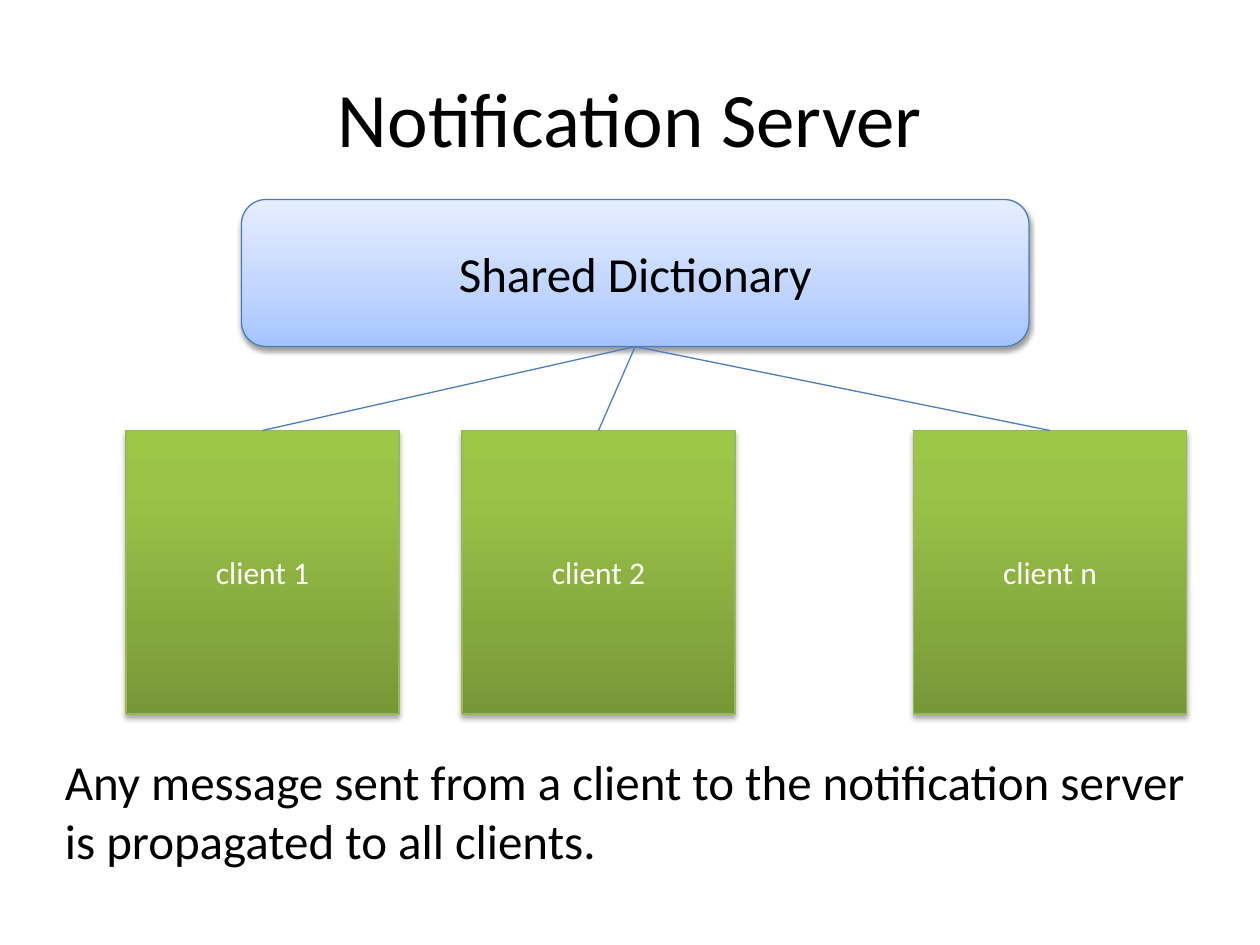
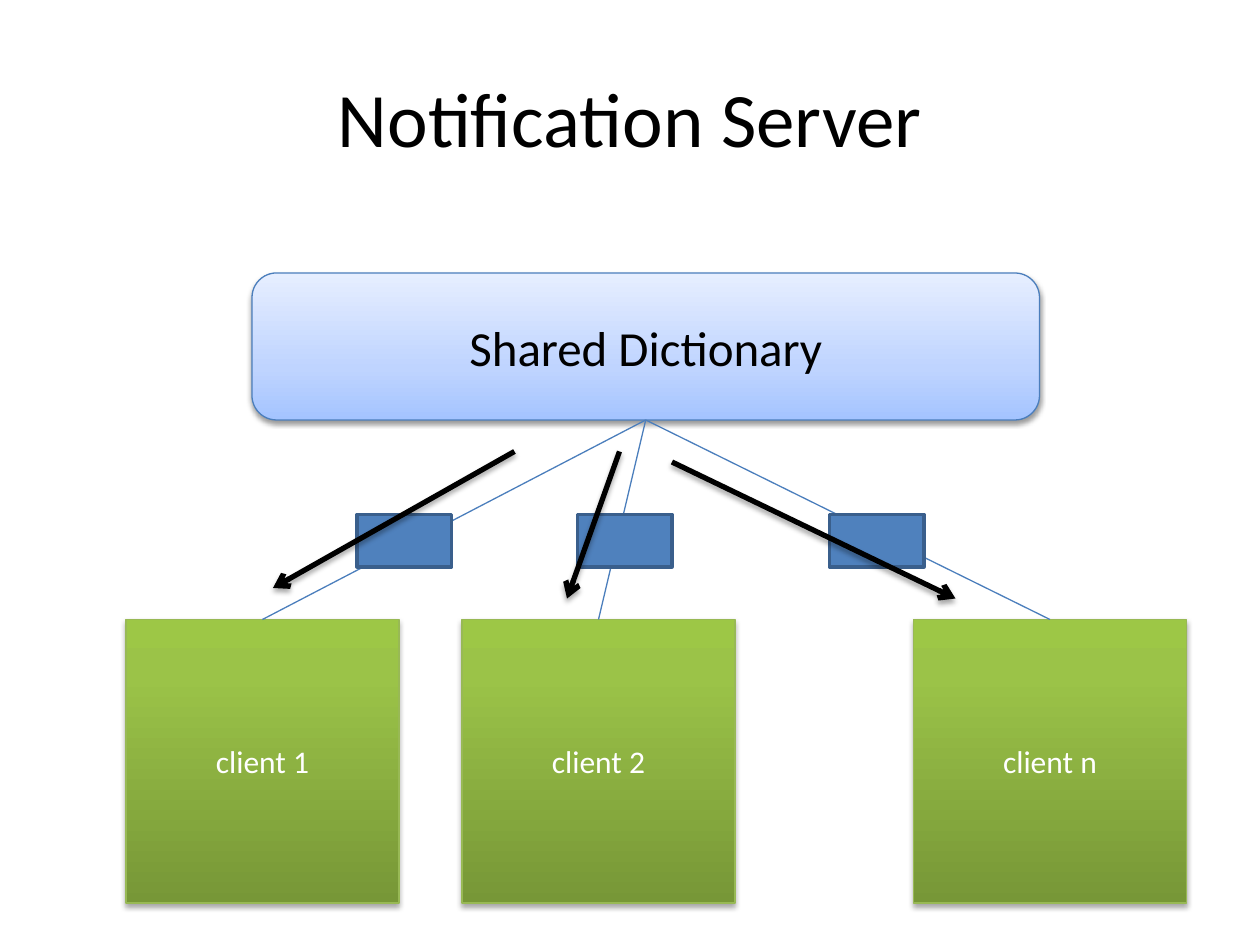
"""Build the two notification server slides."""
from dataclasses import dataclass

from lxml import etree
from pptx import Presentation
from pptx.dml.color import RGBColor
from pptx.enum.shapes import MSO_CONNECTOR, MSO_SHAPE
from pptx.enum.text import MSO_ANCHOR, MSO_AUTO_SIZE, PP_ALIGN
from pptx.oxml.ns import qn
from pptx.shapes.autoshape import Shape
from pptx.shapes.connector import Connector
from pptx.slide import Slide
from pptx.text.text import TextFrame
from pptx.util import Pt

RECTANGLE = MSO_SHAPE.RECTANGLE
ROUNDED_RECTANGLE = MSO_SHAPE.ROUNDED_RECTANGLE
STRAIGHT = MSO_CONNECTOR.STRAIGHT
MIDDLE = MSO_ANCHOR.MIDDLE
CENTER, LEFT = PP_ALIGN.CENTER, PP_ALIGN.LEFT
FIT_SHAPE = MSO_AUTO_SIZE.SHAPE_TO_FIT_TEXT

BLACK = RGBColor(0x00, 0x00, 0x00)
WHITE = RGBColor(0xFF, 0xFF, 0xFF)
GREEN_LINE = RGBColor(0x98, 0xB9, 0x55)
BLUE_LINE = RGBColor(0x4B, 0x7E, 0xBC)
MESSAGE_FILL = RGBColor(0x4F, 0x81, 0xBD)
MESSAGE_LINE = RGBColor(0x3A, 0x5F, 0x8C)
GREEN_STOPS = (
    (0, RGBColor(0x77, 0x97, 0x37)),
    (80, RGBColor(0x9B, 0xC3, 0x48)),
    (100, RGBColor(0x9D, 0xC7, 0x46)),
)
BLUE_STOPS = (
    (0, RGBColor(0xA4, 0xC4, 0xFF)),
    (35, RGBColor(0xBF, 0xD4, 0xFF)),
    (100, RGBColor(0xE6, 0xEE, 0xFF)),
)

FONT = "Calibri"
TITLE_ONLY_LAYOUT = 5
TOP_SITE, BOTTOM_SITE = 0, 2
CLIENT_WIDTH, CLIENT_HEIGHT = 156, 162
DICTIONARY_WIDTH, DICTIONARY_HEIGHT = 450, 84
MESSAGE_WIDTH, MESSAGE_HEIGHT = 54, 30
MESSAGE_TOP = 294
MESSAGE_LEFTS = (204, 330, 474)


@dataclass(frozen=True)
class Client:
    """A client box and its left edge."""

    label: str
    left: float


@dataclass(frozen=True)
class BoxStyle:
    """The look shared by boxes of one kind."""

    preset: MSO_SHAPE
    stops: tuple[tuple[int, RGBColor], ...]
    line_color: RGBColor
    text_color: RGBColor
    text_size: float
    shadow_distance: float
    shadow_opacity: int


@dataclass(frozen=True)
class Arrow:
    """A message arrow from its start to its tip."""

    start: tuple[float, float]
    tip: tuple[float, float]


CLIENTS = (Client("client 1", 72), Client("client 2", 264), Client("client n", 522))
CLIENT_STYLE = BoxStyle(RECTANGLE, GREEN_STOPS, GREEN_LINE, WHITE, 18, 1.8, 35)
DICTIONARY_STYLE = BoxStyle(ROUNDED_RECTANGLE, BLUE_STOPS, BLUE_LINE, BLACK, 28, 1.6, 38)
ARROWS = (
    Arrow((294, 258), (156, 336)),
    Arrow((354, 258), (324, 342)),
    Arrow((384, 264), (546, 342)),
)


def write_text(frame: TextFrame, text: str, size: float, color: RGBColor, alignment: PP_ALIGN) -> None:
    """Write one formatted run into the first paragraph."""
    paragraph = frame.paragraphs[0]
    paragraph.alignment = alignment
    run = paragraph.add_run()
    run.text = text
    run.font.name = FONT
    run.font.size = Pt(size)
    run.font.color.rgb = color


def set_gradient(shape: Shape, stops: tuple[tuple[int, RGBColor], ...]) -> None:
    """Fill the shape with a gradient running from bottom to top."""
    shape.fill.gradient()
    shape.fill.gradient_angle = 90
    stop_list = next(shape._element.iter(qn("a:gsLst")))
    stop_list.clear()
    for percent, color in stops:
        stop = etree.SubElement(stop_list, qn("a:gs"), pos=str(percent * 1000))
        etree.SubElement(stop, qn("a:srgbClr"), val=str(color))


def set_effects(shape: Shape | Connector, distance: float = 0, opacity: int = 0) -> None:
    """Set a downward shadow, or none when the opacity is zero."""
    effects = etree.SubElement(shape._element.spPr, qn("a:effectLst"))
    if opacity:
        shadow = etree.SubElement(
            effects, qn("a:outerShdw"), blurRad=str(Pt(3.1)), dist=str(Pt(distance)),
            dir="5400000", rotWithShape="0",
        )
        color = etree.SubElement(shadow, qn("a:srgbClr"), val=str(BLACK))
        etree.SubElement(color, qn("a:alpha"), val=str(opacity * 1000))


def set_line(shape: Shape | Connector, color: RGBColor, width: float) -> None:
    """Set the colour and width of a line."""
    shape.line.color.rgb = color
    shape.line.width = Pt(width)


def add_box(slide: Slide, style: BoxStyle, text: str,
            left: float, top: float, width: float, height: float) -> Shape:
    """Add a labelled gradient box."""
    box = slide.shapes.add_shape(style.preset, Pt(left), Pt(top), Pt(width), Pt(height))
    set_gradient(box, style.stops)
    set_line(box, style.line_color, 0.75)
    set_effects(box, style.shadow_distance, style.shadow_opacity)
    box.text_frame.vertical_anchor = MIDDLE
    write_text(box.text_frame, text, style.text_size, style.text_color, CENTER)
    return box


def add_link(slide: Slide, client: Shape, dictionary: Shape) -> None:
    """Connect the top of a client to the bottom of the dictionary."""
    link = slide.shapes.add_connector(STRAIGHT, 0, 0, 0, 0)
    link.begin_connect(client, TOP_SITE)
    link.end_connect(dictionary, BOTTOM_SITE)
    set_line(link, BLUE_LINE, 0.75)
    set_effects(link)


def add_server_slide(presentation: Presentation, dictionary_left: float,
                     dictionary_top: float, client_top: float) -> Slide:
    """Add a titled slide with the dictionary linked to its clients."""
    slide = presentation.slides.add_slide(presentation.slide_layouts[TITLE_ONLY_LAYOUT])
    title = slide.shapes.title
    title.left, title.top, title.width, title.height = Pt(36), Pt(21.6), Pt(648), Pt(90)
    title.text_frame.vertical_anchor = MIDDLE
    write_text(title.text_frame, "Notification Server", 44, BLACK, CENTER)
    clients = [
        add_box(slide, CLIENT_STYLE, client.label, client.left, client_top,
                CLIENT_WIDTH, CLIENT_HEIGHT)
        for client in CLIENTS
    ]
    dictionary = add_box(slide, DICTIONARY_STYLE, "Shared Dictionary", dictionary_left,
                         dictionary_top, DICTIONARY_WIDTH, DICTIONARY_HEIGHT)
    for client in clients:
        add_link(slide, client, dictionary)
    return slide


def add_explanation(slide: Slide) -> None:
    """Add the sentence below the clients."""
    text_box = slide.shapes.add_textbox(Pt(30), Pt(426), Pt(654), Pt(75))
    frame = text_box.text_frame
    frame.word_wrap = True
    frame.auto_size = FIT_SHAPE
    write_text(
        frame,
        "Any message sent from a client to the notification server is propagated to all clients.",
        28, BLACK, LEFT,
    )


def add_message(slide: Slide, left: float) -> None:
    """Add a message travelling along a link."""
    message = slide.shapes.add_shape(
        RECTANGLE, Pt(left), Pt(MESSAGE_TOP), Pt(MESSAGE_WIDTH), Pt(MESSAGE_HEIGHT))
    message.fill.solid()
    message.fill.fore_color.rgb = MESSAGE_FILL
    set_line(message, MESSAGE_LINE, 2)
    set_effects(message)


def add_arrow(slide: Slide, arrow: Arrow) -> None:
    """Add a thick arrow with a shadow."""
    connector = slide.shapes.add_connector(STRAIGHT, *map(Pt, arrow.start + arrow.tip))
    set_line(connector, BLACK, 3)
    etree.SubElement(connector.line._get_or_add_ln(), qn("a:tailEnd"), type="arrow")
    set_effects(connector, 1.8, 35)


def main() -> None:
    """Build and save the presentation."""
    presentation = Presentation()
    presentation.slide_width, presentation.slide_height = Pt(720), Pt(540)

    overview = add_server_slide(presentation, 138, 114, 246)
    add_explanation(overview)

    propagation = add_server_slide(presentation, 144, 156, 354)
    for left in MESSAGE_LEFTS:
        add_message(propagation, left)
    for arrow in ARROWS:
        add_arrow(propagation, arrow)

    presentation.save("out.pptx")


if __name__ == "__main__":
    main()
